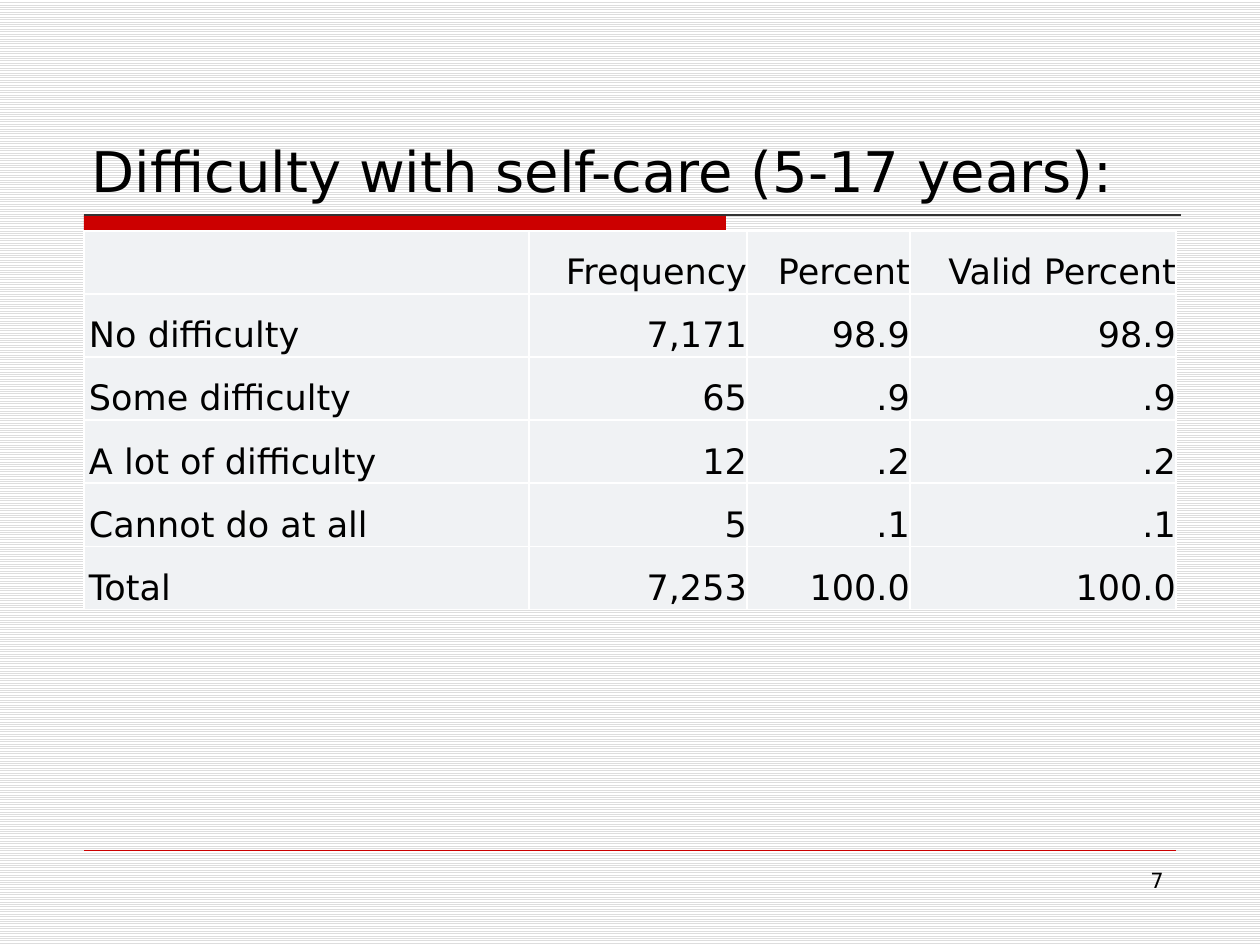
import pptx
import pptx.util
import pptx.dml.color
import pptx.enum.dml
import pptx.enum.shapes
import pptx.enum.text
import pptx.oxml.ns
import lxml.etree

TITLE = "Difficulty with self-care (5-17 years):"
PAGE_NUMBER = "7"
ROWS = [
    ("", "Frequency", "Percent", "Valid Percent"),
    ("No difficulty", "7,171", "98.9", "98.9"),
    ("Some difficulty", "65", ".9", ".9"),
    ("A lot of difficulty", "12", ".2", ".2"),
    ("Cannot do at all", "5", ".1", ".1"),
    ("Total", "7,253", "100.0", "100.0"),
]
COLUMN_WIDTHS = (445, 218, 163, 266)
ROW_HEIGHT = 62
LEFT, RIGHT = 84, 1176
FONT = "DejaVu Sans"
COLORS = {"text": "000000", "accent": "CC0000", "rule": "333333", "cell": "F0F2F4",
          "border": "FFFFFF", "stripe": "DDDDDD", "paper": "FFFFFF"}

ALIGN = pptx.enum.text.PP_ALIGN
ANCHOR = pptx.enum.text.MSO_ANCHOR


def px(length):
    return pptx.util.Emu(round(length * 914400 / 126))


def color(name):
    return pptx.dml.color.RGBColor.from_string(COLORS[name])


def style(paragraph, size, align):
    paragraph.alignment = align
    paragraph.font.name = FONT
    paragraph.font.size = pptx.util.Pt(size)
    paragraph.font.color.rgb = color("text")


def add_child(parent, tag, **attributes):
    return lxml.etree.SubElement(parent, pptx.oxml.ns.qn(tag), attributes)


def add_rule(slide, right, y, name, width):
    rule = slide.shapes.add_connector(
        pptx.enum.shapes.MSO_CONNECTOR.STRAIGHT, px(LEFT), px(y), px(right), px(y))
    rule.line.color.rgb = color(name)
    rule.line.width = pptx.util.Pt(width)
    add_child(rule._element.spPr, "a:effectLst")


def format_cell(cell, text, align):
    cell.text = text
    cell.margin_left = cell.margin_right = cell.margin_top = cell.margin_bottom = 0
    cell.vertical_anchor = ANCHOR.MIDDLE
    paragraph = cell.text_frame.paragraphs[0]
    style(paragraph, 20, align)
    paragraph.line_spacing = 1.5
    paragraph.space_before = paragraph.space_after = pptx.util.Pt(6)
    paragraph._p.get_or_add_pPr().set("marL", str(px(5)))
    properties = cell._tc.get_or_add_tcPr()
    for side in ("a:lnL", "a:lnR", "a:lnT", "a:lnB"):
        border = add_child(properties, side, w=str(pptx.util.Pt(1)))
        add_child(add_child(border, "a:solidFill"), "a:srgbClr", val=COLORS["border"])
    cell.fill.solid()
    cell.fill.fore_color.rgb = color("cell")


def main():
    deck = pptx.Presentation()
    deck.slide_width, deck.slide_height = px(1260), px(945)
    slide = deck.slides.add_slide(deck.slide_layouts[5])

    background = slide.background.fill
    background.patterned()
    background.pattern = pptx.enum.dml.MSO_PATTERN.LIGHT_HORIZONTAL
    background.fore_color.rgb = color("stripe")
    background.back_color.rgb = color("paper")

    bar = slide.shapes.add_shape(
        pptx.enum.shapes.MSO_SHAPE.RECTANGLE, px(LEFT), px(215), px(642), px(15))
    bar.shadow.inherit = False
    bar.fill.solid()
    bar.fill.fore_color.rgb = color("accent")
    bar.line.fill.background()
    add_rule(slide, 1181, 215, "rule", 0.75)
    add_rule(slide, RIGHT, 850, "accent", 0.25)

    title = slide.shapes.title
    title.left, title.top, title.width, title.height = px(79), px(42), px(1157), px(168)
    title.text_frame.text = TITLE
    title.text_frame.auto_size = pptx.enum.text.MSO_AUTO_SIZE.NONE
    title.text_frame.vertical_anchor = ANCHOR.BOTTOM
    style(title.text_frame.paragraphs[0], 32, ALIGN.LEFT)

    number = slide.shapes.add_textbox(px(903), px(861), px(273), px(66)).text_frame
    number.word_wrap = True
    number.text = PAGE_NUMBER
    style(number.paragraphs[0], 12, ALIGN.RIGHT)

    table = slide.shapes.add_table(
        len(ROWS), len(COLUMN_WIDTHS), px(LEFT), px(231),
        px(sum(COLUMN_WIDTHS)), px(ROW_HEIGHT * len(ROWS))).table
    for column, width in zip(table.columns, COLUMN_WIDTHS):
        column.width = px(width)
    for r, values in enumerate(ROWS):
        table.rows[r].height = px(ROW_HEIGHT)
        for c, value in enumerate(values):
            format_cell(table.cell(r, c), value, ALIGN.RIGHT if c else ALIGN.LEFT)
    table.first_row = table.horz_banding = False

    deck.save("out.pptx")


if __name__ == "__main__":
    main()
